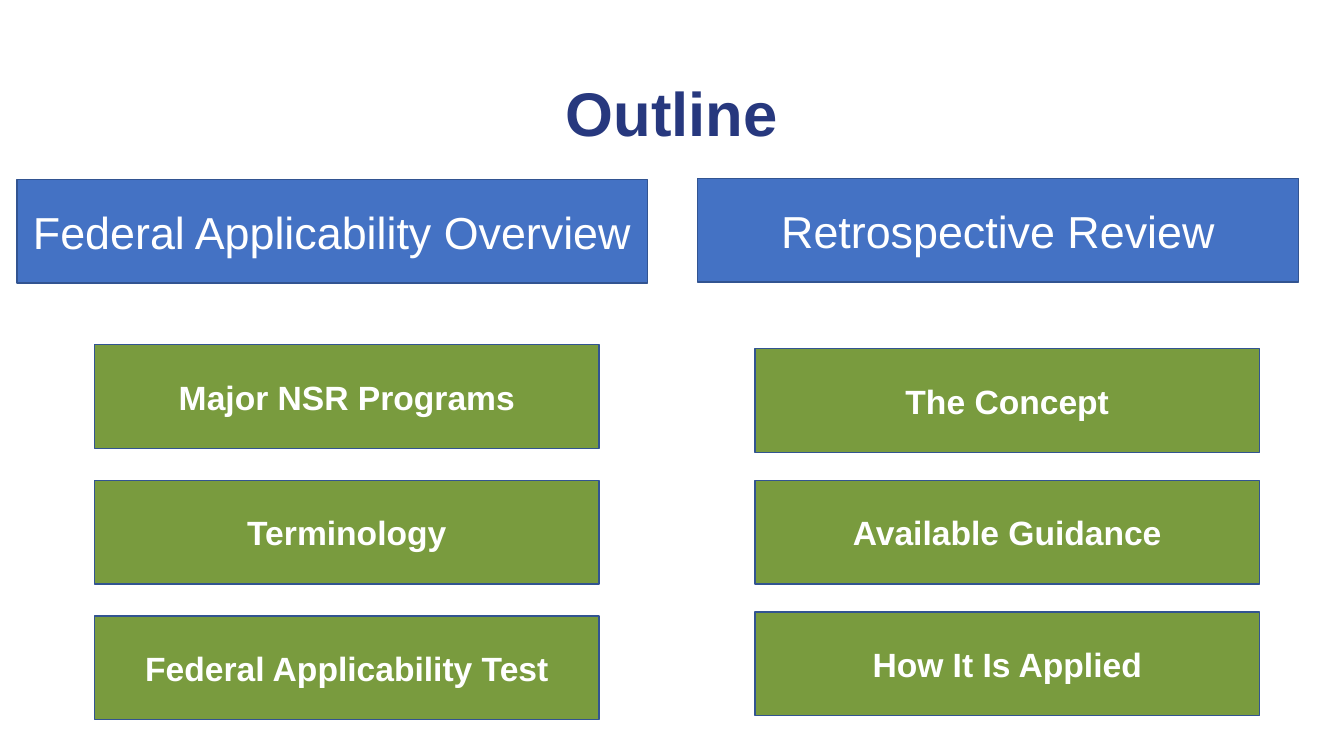
from pptx import Presentation
from pptx.dml.color import RGBColor
from pptx.enum.shapes import MSO_SHAPE
from pptx.enum.text import MSO_ANCHOR, PP_ALIGN
from pptx.util import Inches, Pt

RECTANGLE = MSO_SHAPE.RECTANGLE
MIDDLE = MSO_ANCHOR.MIDDLE
CENTER = PP_ALIGN.CENTER

NAVY = RGBColor(0x27, 0x38, 0x7E)
BLUE = RGBColor(0x44, 0x72, 0xC4)
GREEN = RGBColor(0x79, 0x9B, 0x3E)
OUTLINE_BLUE = RGBColor(0x32, 0x54, 0x91)
WHITE = RGBColor(0xFF, 0xFF, 0xFF)

FONT = "Arial"
BOX_HEIGHT = 1.03
TOPIC_WIDTH = 5


def set_text(shape, text, size, color, bold):
    frame = shape.text_frame
    frame.text = text
    frame.word_wrap = True
    frame.vertical_anchor = MIDDLE
    paragraph = frame.paragraphs[0]
    paragraph.alignment = CENTER
    font = paragraph.font
    font.name = FONT
    font.size = Pt(size)
    font.bold = bold
    font.color.rgb = color
    return paragraph


def add_title(slide, text, left, top, width, height):
    title = slide.shapes.title
    title.left, title.top = Inches(left), Inches(top)
    title.width, title.height = Inches(width), Inches(height)
    set_text(title, text, 44, NAVY, True).line_spacing = 0.9


def add_box(slide, text, left, top, width, fill, size, bold):
    box = slide.shapes.add_shape(RECTANGLE, Inches(left), Inches(top),
                                 Inches(width), Inches(BOX_HEIGHT))
    box.shadow.inherit = False
    box.fill.solid()
    box.fill.fore_color.rgb = fill
    box.line.color.rgb = OUTLINE_BLUE
    box.line.width = Pt(1)
    set_text(box, text, size, WHITE, bold)


def add_column(slide, heading, topics, left, top, width, indent, drop, pitch):
    """Heading bar with evenly spaced topics, the first one `drop` below its top."""
    add_box(slide, heading, left, top, width, BLUE, 32, False)
    for row, topic in enumerate(topics):
        add_box(slide, topic, left + indent, top + drop + row * pitch,
                TOPIC_WIDTH, GREEN, 24, True)


def main():
    prs = Presentation()
    prs.slide_width, prs.slide_height = Inches(13.33), Inches(7.5)
    slide = prs.slides.add_slide(prs.slide_layouts[5])

    add_title(slide, "Outline", 0.46, 0.71, 12.41, 0.89)

    # Left column: federal rules
    add_column(slide, "Federal Applicability Overview",
               ["Major NSR Programs", "Terminology", "Federal Applicability Test"],
               left=0.17, top=1.78, width=6.25, indent=0.77, drop=1.64, pitch=1.345)

    # Right column: retrospective review
    add_column(slide, "Retrospective Review",
               ["The Concept", "Available Guidance", "How It Is Applied"],
               left=6.92, top=1.77, width=5.96, indent=0.57, drop=1.69, pitch=1.305)

    prs.save("out.pptx")


if __name__ == "__main__":
    main()
